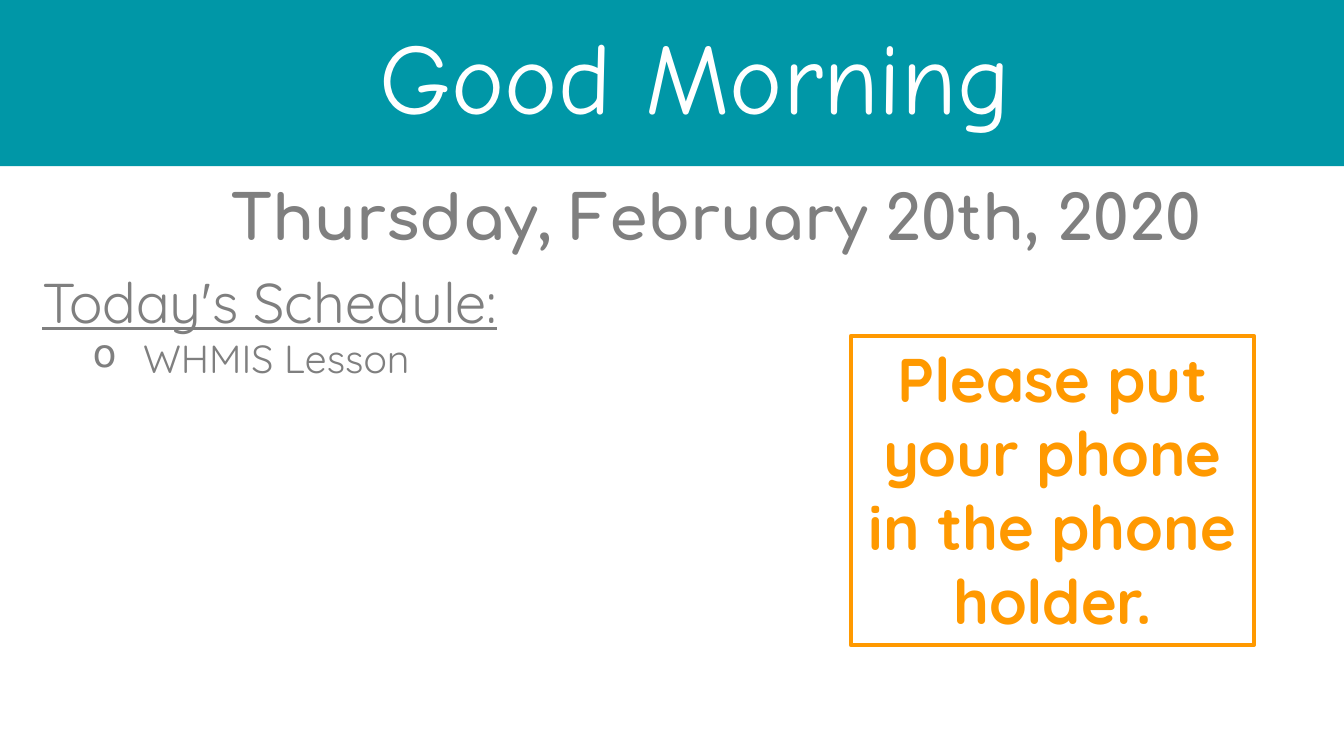
from pptx import Presentation
from pptx.util import Pt
from pptx.dml.color import RGBColor
from pptx.enum.shapes import MSO_SHAPE
from pptx.enum.text import MSO_ANCHOR, PP_ALIGN, MSO_AUTO_SIZE
from lxml.etree import SubElement

# Content
TITLE = "Good Morning"
DATE = "Thursday, February 20th, 2020"
HEAD = "Today's Schedule:"
PLANS = ["WHMIS Lesson"]
NOTE = "Please put your phone in the phone holder."

COLORS = {"teal": "0097A7", "white": "FFFFFF", "gray": "7F7F7F", "orange": "FF9900"}
WIDTH, HEIGHT = 720, 405
A = "{http://schemas.openxmlformats.org/drawingml/2006/main}"


def color(name):
    return RGBColor.from_string(COLORS[name])


def place(shape, box):
    shape.left, shape.top, shape.width, shape.height = map(Pt, box)


def frame(shape, lines, anchor=MSO_ANCHOR.TOP):
    text = shape.text_frame
    text.text = "\n".join(lines)
    text.word_wrap = True
    text.auto_size = MSO_AUTO_SIZE.NONE
    text.vertical_anchor = anchor
    text.margin_left = text.margin_right = Pt(5.4)
    text.margin_top = text.margin_bottom = Pt(2.7)
    return text.paragraphs


def style(para, face, size, tint, bold=False, line=False, align=PP_ALIGN.CENTER):
    para.alignment = align
    for run in para.runs:
        font = run.font
        font.name, font.size = face, Pt(size)
        font.bold, font.underline = bold, line
        font.color.rgb = color(tint)


def bullet(para, mark, tint, left, hang):
    props = para._p.get_or_add_pPr()
    props.set("lvl", "1")
    props.set("marL", str(Pt(left)))
    props.set("indent", str(-Pt(hang)))
    fill = SubElement(props, A + "buClr")
    SubElement(fill, A + "srgbClr", val=COLORS[tint])
    SubElement(props, A + "buChar", char=mark)


def rect(shapes, box):
    shape = shapes.add_shape(MSO_SHAPE.RECTANGLE, *map(Pt, box))
    shape.shadow.inherit = False
    return shape


deck = Presentation()
deck.slide_width, deck.slide_height = Pt(WIDTH), Pt(HEIGHT)
slide = deck.slides.add_slide(deck.slide_layouts[5])
shapes = slide.shapes

# Banner behind the title
title = shapes.title
band = rect(shapes, (0, 0, WIDTH, 89))
band.fill.solid()
band.fill.fore_color.rgb = color("teal")
band.line.fill.background()
title.element.addprevious(band.element)

# Title
place(title, (62, 4.5, 621, 78.5))
para = frame(title, [TITLE], MSO_ANCHOR.MIDDLE)[0]
para.line_spacing = 0.9
style(para, "Comic Neue", 54, "white")

# Schedule
plan = shapes.add_textbox(*map(Pt, (17.3, 140.4, 404, 160)))
head, *items = frame(plan, [HEAD, *PLANS])
style(head, "Quicksand", 30, "gray", line=True, align=PP_ALIGN.LEFT)
for item in items:
    style(item, "Quicksand", 21, "gray", align=PP_ALIGN.LEFT)
    bullet(item, "o", "gray", 54, 27)

# Date
date = shapes.add_textbox(*map(Pt, (95, 93, 577.5, 44)))
style(frame(date, [DATE])[0], "Comfortaa", 33, "gray", bold=True)

# Phone reminder
note = rect(shapes, (455.8, 180, 216, 165.6))
note.fill.background()
note.line.color.rgb = color("orange")
note.line.width = Pt(2.25)
style(frame(note, [NOTE])[0], "Quicksand", 33, "orange", bold=True)

deck.save("out.pptx")
